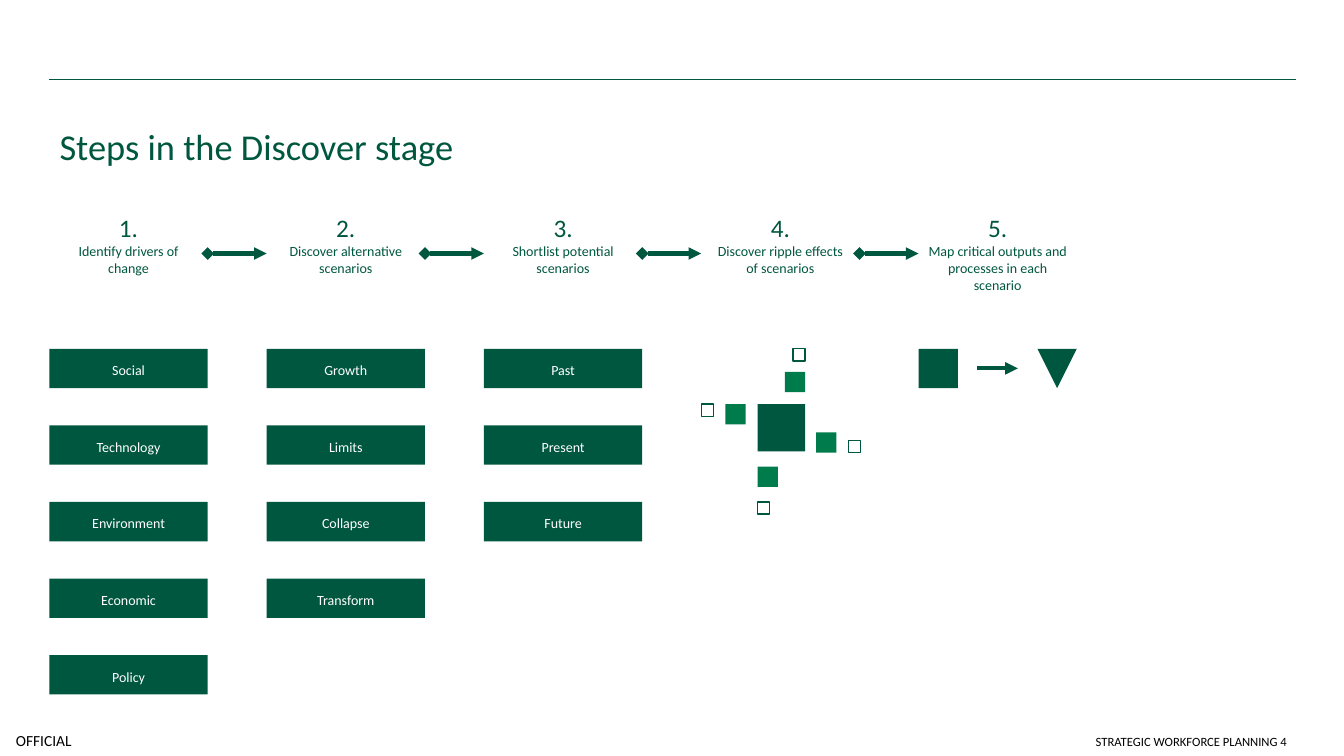
from dataclasses import dataclass
from lxml.etree import SubElement
from pptx import Presentation
from pptx.dml.color import RGBColor as RGB
from pptx.enum.shapes import MSO_CONNECTOR as Link, MSO_SHAPE as Form
from pptx.enum.text import MSO_ANCHOR as Anchor, MSO_AUTO_SIZE as Fit, PP_ALIGN as Align
from pptx.oxml.ns import qn
from pptx.util import Inches, Pt


@dataclass(frozen=True)
class Theme:
    font: str = "Calibri"
    dark: RGB = RGB(0x00, 0x57, 0x3F)
    mid: RGB = RGB(0x00, 0x7B, 0x4B)
    white: RGB = RGB(0xFF, 0xFF, 0xFF)
    black: RGB = RGB(0x00, 0x00, 0x00)
    title: int = 26
    step: int = 18
    body: int = 10
    label: int = 11
    foot: int = 9


T = Theme()
WIDE, HIGH = 13.33, 7.5
LEFT, RIGHT = 0.49, 12.85
COL = (9.11 - LEFT) / 4
CARD = 1.57
HEAD, TALL = 2.06, 0.91
TOP, ROW, SIDE = 3.46, 0.76, 0.39

STEPS = [
    ("Identify drivers of change",
     ["Social", "Technology", "Environment", "Economic", "Policy"]),
    ("Discover alternative scenarios",
     ["Growth", "Limits", "Collapse", "Transform"]),
    ("Shortlist potential scenarios", ["Past", "Present", "Future"]),
    ("Discover ripple effects of scenarios", []),
    ("Map critical outputs and processes in each scenario", []),
]
# Offsets of each ripple from the left of column 4 and the top row
NEAR = [(0.83, 0.23), (0.56, 1.17), (1.14, 0.83), (0.24, 0.55)]
FAR = [(0.91, 0), (0.56, 1.52), (1.46, 0.91), (0, 0.55)]


def col(n):
    return LEFT + n * COL


def row(n):
    return TOP + n * ROW


def box(*sizes):
    return [Inches(s) for s in sizes]


def style(para, size, color, align=Align.CENTER):
    para.alignment = align
    para.font.name, para.font.size = T.font, Pt(size)
    para.font.color.rgb = color


def inset(frame, gap=0):
    frame.margin_left = frame.margin_right = Inches(gap)
    frame.margin_top = frame.margin_bottom = Inches(gap / 2)


def text(slide, place, lines, anchor=Anchor.TOP, gap=0.1):
    """Add a text box; each line is (words, size, colour, alignment)."""
    area = slide.shapes.add_textbox(*box(*place))
    frame = area.text_frame
    frame.word_wrap, frame.vertical_anchor = True, anchor
    inset(frame, gap)
    for n, (words, *look) in enumerate(lines):
        para = frame.add_paragraph() if n else frame.paragraphs[0]
        para.text = words
        style(para, *look)
    return area


def block(home, x, y, w, h, fill=T.dark, edge=None, form=Form.RECTANGLE):
    shape = home.shapes.add_shape(form, *box(x, y, w, h))
    shape.shadow.inherit = False
    shape.fill.solid()
    shape.fill.fore_color.rgb = fill
    if edge is None:
        shape.line.fill.background()
    else:
        shape.line.color.rgb, shape.line.width = edge, Pt(1)
    return shape


def card(slide, x, y, words):
    frame = block(slide, x, y, CARD, SIDE).text_frame
    inset(frame)
    frame.vertical_anchor = Anchor.MIDDLE
    para = frame.paragraphs[0]
    para.text, para.line_spacing, para.space_after = words, 1.2, Pt(9)
    style(para, T.body, T.white)


def line(home, x1, y1, x2, y2, width=3, head=None, tail=None):
    link = home.shapes.add_connector(Link.STRAIGHT, *box(x1, y1, x2, y2))
    link.line.color.rgb, link.line.width = T.dark, Pt(width)
    props = link.line._get_or_add_ln()
    for tag, kind in (("a:headEnd", head), ("a:tailEnd", tail)):
        if kind:
            SubElement(props, qn(tag), type=kind)
    SubElement(props.getparent(), qn("a:effectLst"))
    return link


def title(slide, words):
    head = slide.shapes.title
    head.left, head.top, head.width, head.height = box(LEFT, 0.89, RIGHT - LEFT, 1.02)
    frame = head.text_frame
    frame.text, frame.auto_size = words, Fit.NONE
    frame.vertical_anchor = Anchor.MIDDLE
    para = frame.paragraphs[0]
    para.line_spacing = 1.2
    style(para, T.title, T.dark, Align.LEFT)


def steps(slide):
    """Lay out the five numbered steps, their cards and the arrows between."""
    heads = []
    for n, (words, cards) in enumerate(STEPS):
        heads.append(text(slide, (col(n), HEAD, CARD, TALL), [
            (f"{n + 1}.", T.step, T.dark, Align.CENTER),
            (words, T.body, T.dark, Align.CENTER)]))
        for k, name in enumerate(cards):
            card(slide, col(n), row(k), name)
    mid = HEAD + TALL / 2
    for n, (prev, after) in enumerate(zip(heads, heads[1:])):
        link = line(slide, col(n) + CARD, mid, col(n + 1), mid,
                    head="diamond", tail="triangle")
        link.begin_connect(prev, 3)
        link.end_connect(after, 1)


def ripple(slide, x, y):
    group = slide.shapes.add_group_shape()
    block(group, x + 0.56, y + 0.55, 0.47, 0.47)
    for dx, dy in NEAR:
        block(group, x + dx, y + dy, 0.2, 0.2, T.mid)
    for dx, dy in FAR:
        block(group, x + dx, y + dy, 0.12, 0.12, T.white, T.dark)


def output(slide, x, y):
    group = slide.shapes.add_group_shape()
    block(group, x, y, SIDE, SIDE)
    cone = block(group, x + CARD - SIDE, y, SIDE, SIDE,
                 form=Form.ISOSCELES_TRIANGLE)
    cone.rotation = 180
    mid = y + SIDE / 2
    line(group, x + 1.5 * SIDE, mid, x + CARD - 1.5 * SIDE, mid, tail="triangle")


def main():
    deck = Presentation()
    deck.slide_width, deck.slide_height = box(WIDE, HIGH)
    slide = deck.slides.add_slide(deck.slide_layouts[5])
    line(slide, LEFT, 0.79, RIGHT, 0.79, width=1)
    text(slide, (0, 7.19, 0.87, 0.31),
         [("OFFICIAL", T.label, T.black, Align.CENTER)], Anchor.MIDDLE, 0)
    title(slide, "Steps in the Discover stage")
    steps(slide)
    ripple(slide, col(3), TOP)
    output(slide, col(4), TOP)
    text(slide, (6.84, 7.09, 6.02, 0.39),
         [("STRATEGIC WORKFORCE PLANNING 4", T.foot, T.black, Align.RIGHT)],
         Anchor.BOTTOM)
    deck.save("out.pptx")


if __name__ == "__main__":
    main()
